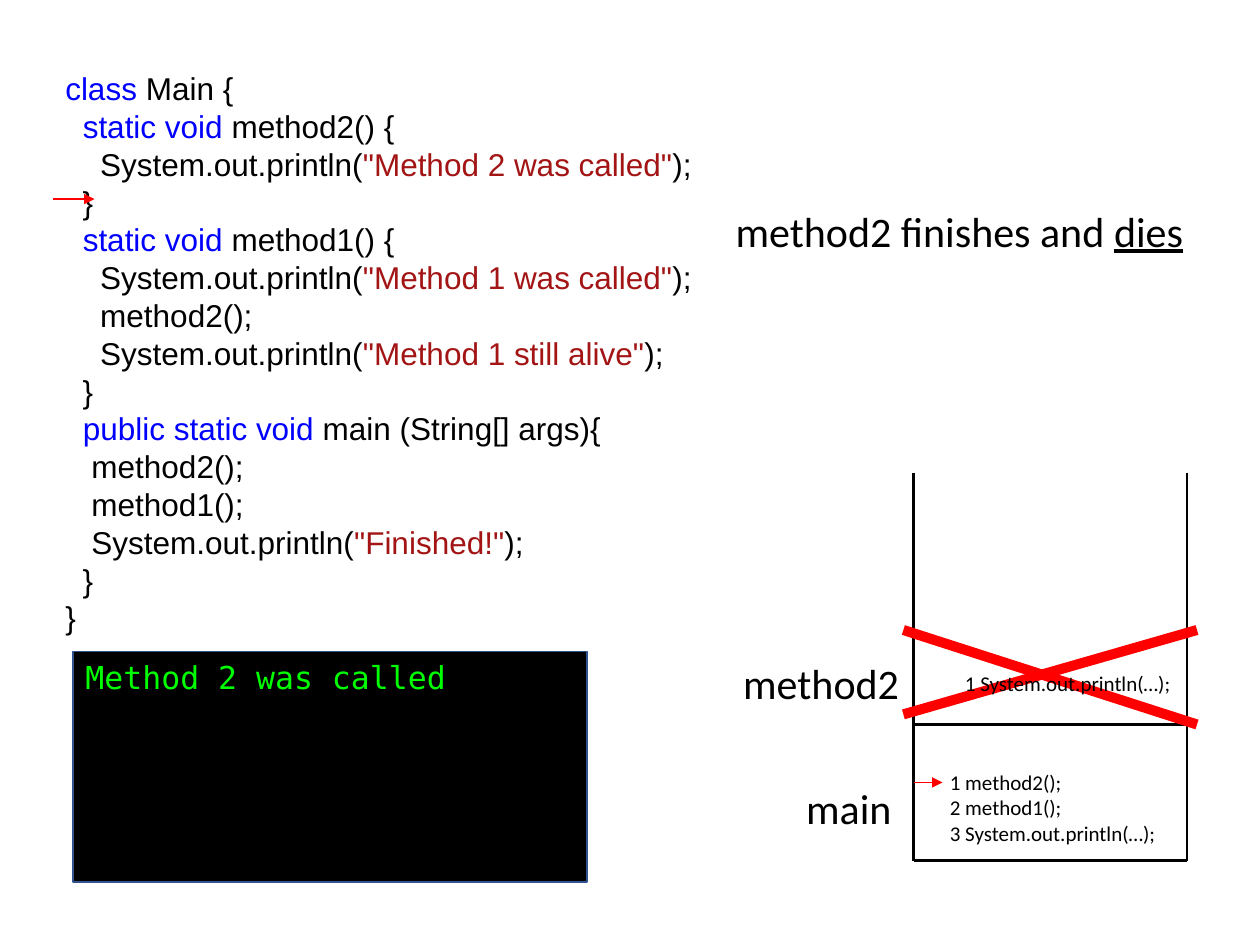
from lxml import etree
from pptx import Presentation
from pptx.dml.color import RGBColor
from pptx.enum import shapes, text
from pptx.oxml import ns
from pptx.util import Inches, Pt

COLOURS = {
    "plain": "000000",
    "keyword": "0000FF",
    "string": "A31515",
    "alert": "FF0000",
    "console": "00FF00",
    "border": "31538F",
}

CODE_FONT = {"name": "Arial", "size": Pt(18)}
LABEL_FONT = {"name": "Calibri", "size": Pt(24)}
FRAME_FONT = {"name": "Calibri", "size": Pt(12)}
CONSOLE_FONT = {"name": "DejaVu Sans Mono", "size": Pt(18)}

CODE = [
    [("class", "keyword"), (" Main {", "plain")],
    [("  ", "plain"), ("static void", "keyword"), (" method2() {", "plain")],
    [("    System.out.println(", "plain"), ('"Method 2 was called"', "string"), (");", "plain")],
    [("  }", "plain")],
    [("  ", "plain"), ("static void", "keyword"), (" method1() {", "plain")],
    [("    System.out.println(", "plain"), ('"Method 1 was called"', "string"), (");", "plain")],
    [("    method2();", "plain")],
    [("    System.out.println(", "plain"), ('"Method 1 still alive"', "string"), (");", "plain")],
    [("  }", "plain")],
    [("  ", "plain"), ("public static void ", "keyword"), ("main (String[] args){", "plain")],
    [("   method2();", "plain")],
    [("   method1();", "plain")],
    [("   System.out.println(", "plain"), ('"Finished!"', "string"), (");", "plain")],
    [("  }", "plain")],
    [("}", "plain")],
]

STACK_LEFT, STACK_RIGHT = 7.25, 9.42
STACK_TOP, FRAME_TOP, STACK_BOTTOM = 3.75, 5.75, 6.83
CROSS_LEFT, CROSS_RIGHT, CROSS_TOP = 7.17, 9.5, 5


def rgb(colour):
    return RGBColor.from_string(COLOURS[colour])


def add_run(paragraph, words, font_format, colour="plain"):
    run = paragraph.add_run()
    run.text = words
    for key, value in font_format.items():
        setattr(run.font, key, value)
    run.font.color.rgb = rgb(colour)
    return run


def fill_frame(frame, lines, font_format):
    frame.word_wrap = True
    frame.vertical_anchor = text.MSO_ANCHOR.TOP
    for index, line in enumerate(lines):
        paragraph = frame.add_paragraph() if index else frame.paragraphs[0]
        paragraph.alignment = text.PP_ALIGN.LEFT
        for words, colour in line:
            add_run(paragraph, words, font_format, colour)


def add_text(slide, box, lines, font_format):
    label = slide.shapes.add_textbox(*map(Inches, box))
    fill_frame(label.text_frame, lines, font_format)
    return label


def add_line(slide, start, end, width, colour="plain", arrow=False):
    line = slide.shapes.add_connector(
        shapes.MSO_CONNECTOR.STRAIGHT, *map(Inches, (*start, *end)))
    line.line.color.rgb = rgb(colour)
    line.line.width = Pt(width)
    if arrow:
        etree.SubElement(line.line._get_or_add_ln(), ns.qn("a:tailEnd"), type="triangle")
    etree.SubElement(line._element.spPr, ns.qn("a:effectLst"))


def add_console(slide, box, output):
    console = slide.shapes.add_shape(shapes.MSO_SHAPE.RECTANGLE, *map(Inches, box))
    console.shadow.inherit = False
    console.fill.solid()
    console.fill.fore_color.rgb = rgb("plain")
    console.line.color.rgb = rgb("border")
    console.line.width = Pt(1)
    fill_frame(console.text_frame, [[(output, "console")]], CONSOLE_FONT)


def add_stack(slide):
    for side in (STACK_LEFT, STACK_RIGHT):
        add_line(slide, (side, STACK_TOP), (side, STACK_BOTTOM), 1.5)
    for level in (STACK_BOTTOM, FRAME_TOP):
        add_line(slide, (STACK_LEFT, level), (STACK_RIGHT, level), 1.5)
    for name, box in (("main", (6.3, 6.16, 0.89, 0.5)),
                      ("method2", (5.8, 5.17, 1.45, 0.5))):
        add_text(slide, box, [[(name, "plain")]], LABEL_FONT)


def add_cross(slide):
    for left_y, right_y in ((CROSS_TOP, FRAME_TOP), (5.67, CROSS_TOP)):
        add_line(slide, (CROSS_LEFT, left_y), (CROSS_RIGHT, right_y), 5.75, "alert")


def add_frame_calls(slide, box, calls):
    lines = [[(f"{number} {call};", "plain")] for number, call in enumerate(calls, 1)]
    add_text(slide, box, lines, FRAME_FONT)


def main():
    deck = Presentation()
    deck.slide_width, deck.slide_height = Inches(10), Inches(7.5)
    slide = deck.slides.add_slide(deck.slide_layouts[6])

    add_text(slide, (0.42, 0.5, 7.67, 4.65), CODE, CODE_FONT)
    add_line(slide, (0.42, 1.58), (0.75, 1.58), 1.25, "alert", arrow=True)
    add_stack(slide)
    add_console(slide, (0.58, 5.17, 4.08, 1.83), "Method 2 was called")
    add_cross(slide)

    remark = add_text(slide, (5.74, 1.58, 3.79, 0.5),
                      [[("method2 finishes and ", "plain")]], LABEL_FONT)
    add_run(remark.text_frame.paragraphs[0], "dies", {**LABEL_FONT, "underline": True})

    add_line(slide, (STACK_LEFT, 6.21), (7.48, 6.21), 0.75, "alert", arrow=True)
    add_frame_calls(slide, (7.44, 6.06, 1.98, 0.71),
                    ["method2()", "method1()", "System.out.println(…)"])
    add_frame_calls(slide, (7.56, 5.27, 1.86, 0.4), ["System.out.println(…)"])

    deck.save("out.pptx")


if __name__ == "__main__":
    main()
